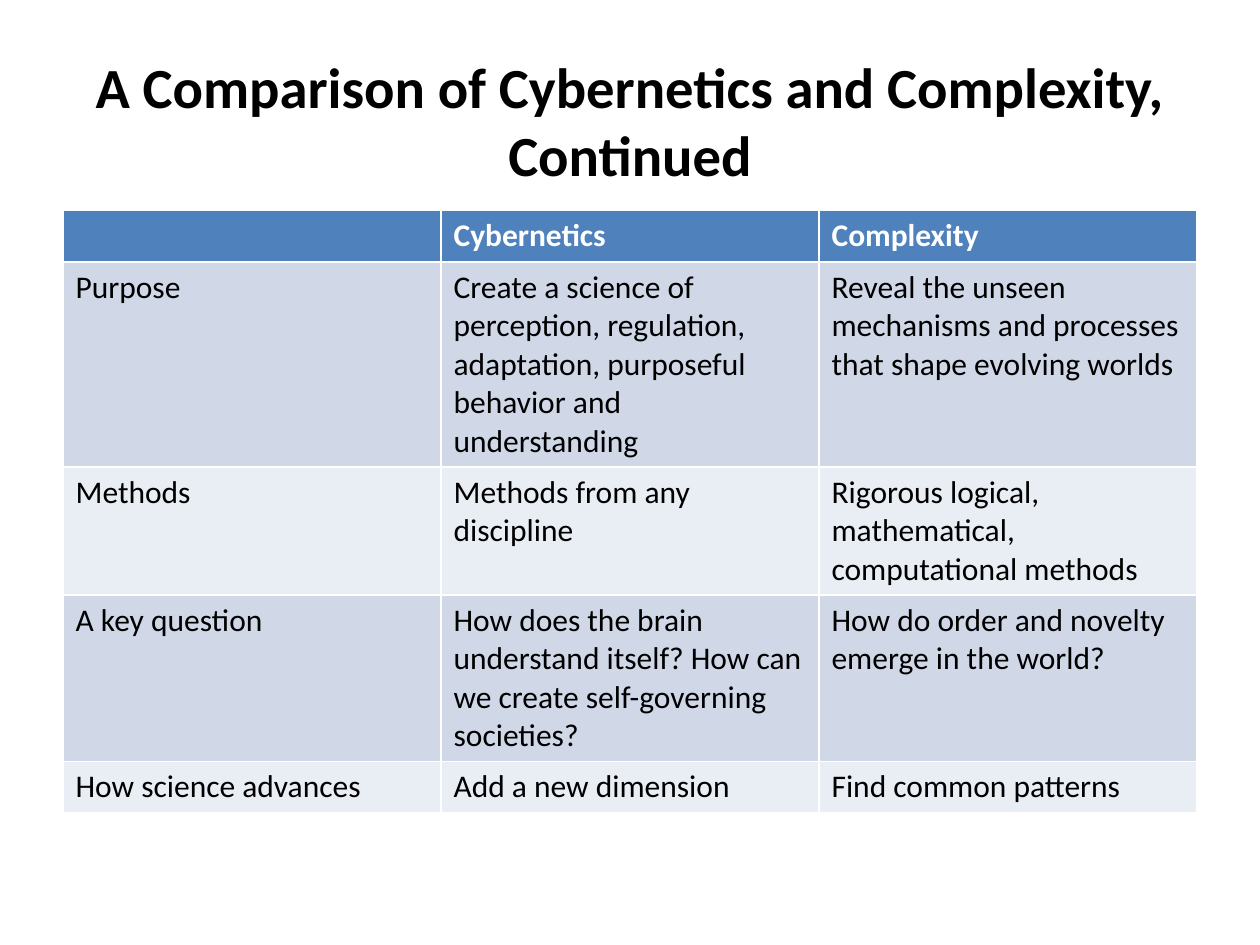
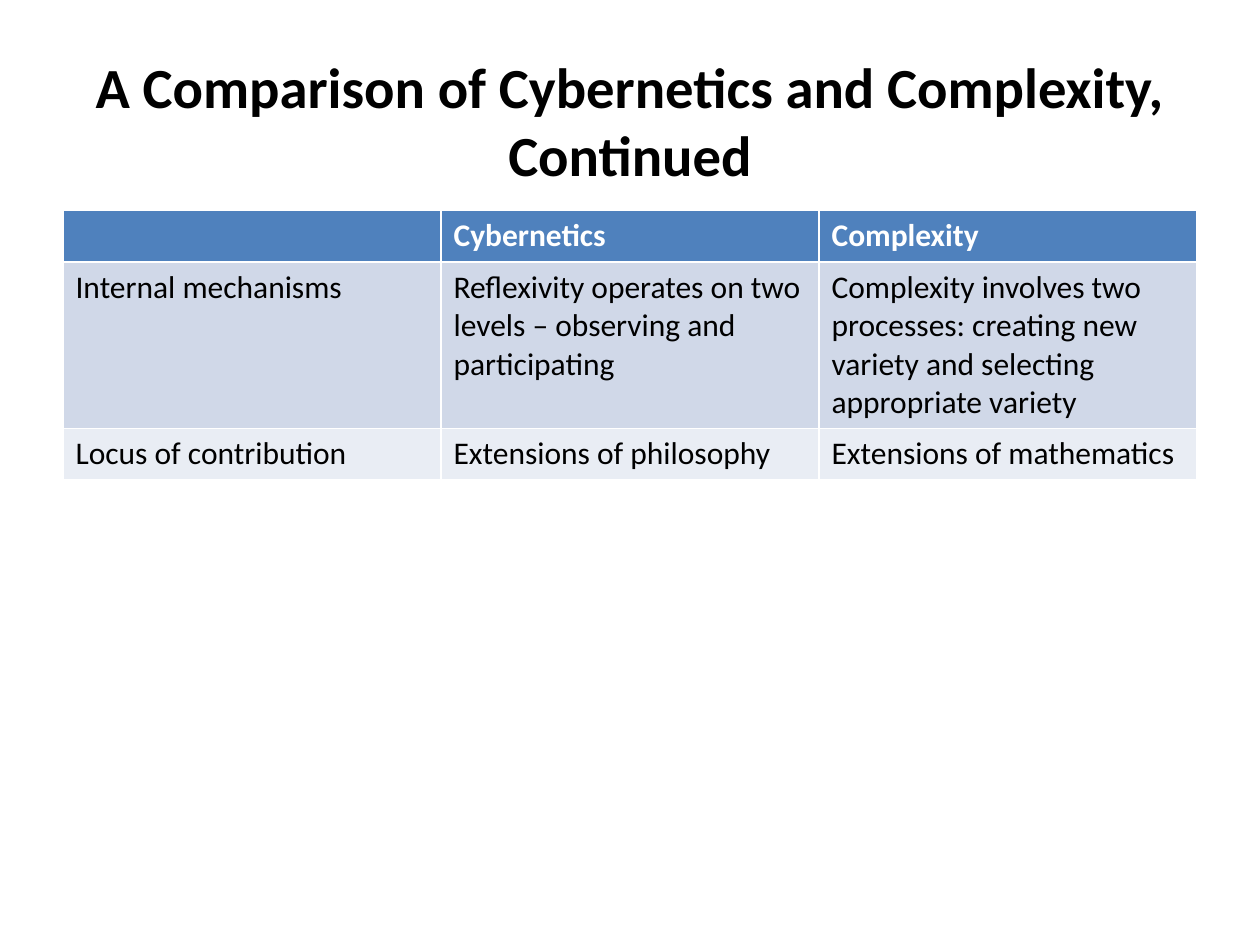
import pptx
import pptx.dml.color
import pptx.enum.text
import pptx.util

Inches = pptx.util.Inches

FONT = "Calibri"
BLACK, WHITE = "000000", "FFFFFF"
HEADER_FILL = "4F81BD"
BAND_FILLS = ("D0D8E8", "E9EDF4")
TITLE_BOX = (0.5, 0.42, 9, 1.67)
TABLE_BOX = (0.5, 1.67, 9)
ROW_HEIGHT = 0.41

HEADING = "A Comparison of Cybernetics and Complexity, Continued"
COLUMN_HEADS = ("", "Cybernetics", "Complexity")
AIMS_AND_METHODS = [
    ("Purpose",
     "Create a science of perception, regulation, adaptation, "
     "purposeful behavior and understanding",
     "Reveal the unseen mechanisms and processes that shape evolving worlds"),
    ("Methods",
     "Methods from any discipline",
     "Rigorous logical, mathematical, computational methods"),
    ("A key question",
     "How does the brain understand itself? "
     "How can we create self-governing societies?",
     "How do order and novelty emerge in the world?"),
    ("How science advances", "Add a new dimension", "Find common patterns"),
]
MECHANISMS_AND_LOCUS = [
    ("Internal mechanisms",
     "Reflexivity operates on two levels – observing and participating",
     "Complexity involves two processes: creating new variety "
     "and selecting appropriate variety"),
    ("Locus of contribution",
     "Extensions of philosophy",
     "Extensions of mathematics"),
]


def rgb(hex_colour):
    return pptx.dml.color.RGBColor.from_string(hex_colour)


def style_font(font, size, colour, bold):
    font.name = FONT
    font.size = pptx.util.Pt(size)
    font.bold = bold
    font.color.rgb = rgb(colour)


def set_title(slide, box):
    title = slide.shapes.title
    title.left, title.top, title.width, title.height = map(Inches, box)
    frame = title.text_frame
    frame.text = HEADING
    frame.word_wrap = True
    frame.auto_size = pptx.enum.text.MSO_AUTO_SIZE.NONE
    frame.vertical_anchor = pptx.enum.text.MSO_ANCHOR.MIDDLE
    # Keeps the heading clear of the table, which overlaps the title box
    frame.margin_bottom = Inches(0.66)
    heading = frame.paragraphs[0]
    heading.alignment = pptx.enum.text.PP_ALIGN.CENTER
    style_font(heading.runs[0].font, 32.4, BLACK, True)


def add_comparison(slide, box, topics):
    left, top, width = map(Inches, box)
    rows = [COLUMN_HEADS, *topics]
    comparison = slide.shapes.add_table(
        len(rows), len(COLUMN_HEADS), left, top, width,
        Inches(ROW_HEIGHT * len(rows))).table
    for row_index, texts in enumerate(rows):
        is_header = row_index == 0
        fill = HEADER_FILL if is_header else BAND_FILLS[(row_index - 1) % 2]
        for column, text in enumerate(texts):
            cell = comparison.cell(row_index, column)
            cell.fill.solid()
            cell.fill.fore_color.rgb = rgb(fill)
            cell.text_frame.text = text
            for run in cell.text_frame.paragraphs[0].runs:
                style_font(run.font, 18, WHITE if is_header else BLACK,
                           is_header)


def add_comparison_slide(deck, topics):
    slide = deck.slides.add_slide(deck.slide_layouts.get_by_name("Title Only"))
    set_title(slide, TITLE_BOX)
    add_comparison(slide, TABLE_BOX, topics)


def main():
    deck = pptx.Presentation()
    deck.slide_width, deck.slide_height = Inches(10), Inches(7.5)
    for topics in (AIMS_AND_METHODS, MECHANISMS_AND_LOCUS):
        add_comparison_slide(deck, topics)
    deck.save("out.pptx")


if __name__ == "__main__":
    main()
